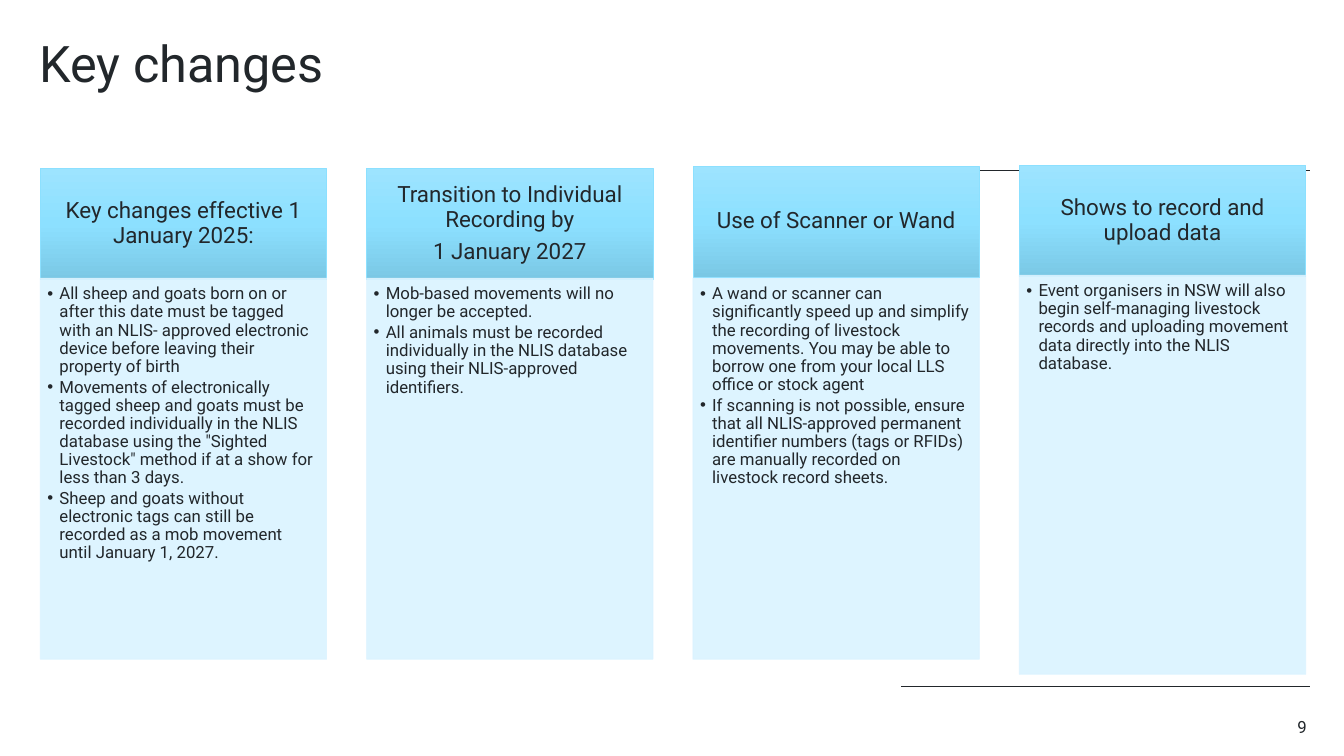
from copy import deepcopy

from lxml import etree
from pptx import Presentation
from pptx import util as u
from pptx.dml.color import RGBColor
from pptx.enum import shapes, text
from pptx.oxml import ns

PX = 9144
FONT = "Roboto"
INK = RGBColor(0x22, 0x27, 0x2B)
SKY = RGBColor(0x8C, 0xE0, 0xFF)
SKY_LIGHT = RGBColor(0x9D, 0xE4, 0xFF)
SKY_DARK = RGBColor(0x7A, 0xC8, 0xE5)
PALE = RGBColor(0xDA, 0xF3, 0xFF)

COLUMN_LEFT, COLUMN_STEP, COLUMN_WIDTH, HEAD_HEIGHT = 40, 323.67, 284, 110
COLUMNS = [
    (167, 276, 378, ["Key changes effective 1 January 2025:"], [
        "All sheep and goats born on or after this date must be tagged with an NLIS- approved "
        "electronic device before leaving their property of birth",
        "Movements of electronically tagged sheep and goats must be recorded individually in the "
        "NLIS database using the \"Sighted Livestock\" method if at a show for less than 3 days.",
        "Sheep and goats without electronic tags can still be recorded as a mob movement until "
        "January 1, 2027.",
    ]),
    (167, 276, 378, ["Transition to Individual Recording by", "1 January 2027"], [
        "Mob-based movements will no longer be accepted.",
        "All animals must be recorded individually in the NLIS database using their NLIS-approved "
        "identifiers.",
    ]),
    (165, 276, 378, ["Use of Scanner or Wand"], [
        "A wand or scanner can significantly speed up and simplify the recording of livestock "
        "movements. You may be able to borrow one from your local LLS office or stock agent",
        "If scanning is not possible, ensure that all NLIS-approved permanent identifier numbers "
        "(tags or RFIDs) are manually recorded on livestock record sheets.",
    ]),
    (164, 273, 396, ["Shows to record and upload data"], [
        "Event organisers in NSW will also begin self-managing livestock records and uploading "
        "movement data directly into the NLIS database.",
    ]),
]


def px(*lengths):
    return [u.Emu(round(length * PX)) for length in lengths]


def write(shape, lines, size, align, after=0, insets=(0, 0, 0, 0),
          anchor=text.MSO_ANCHOR.TOP, bullets=False):
    frame = shape.text_frame
    frame.word_wrap = True
    frame.vertical_anchor = anchor
    frame.margin_left, frame.margin_top, frame.margin_right, frame.margin_bottom = px(*insets)
    for index, line in enumerate(lines):
        para = frame.add_paragraph() if index else frame.paragraphs[0]
        para.text = line
        para.alignment = align
        para.line_spacing = 0.9
        para.space_after = u.Pt(after)
        if bullets:
            indent, = px(12)
            properties = para._p.get_or_add_pPr()
            properties.set("marL", str(indent))
            properties.set("indent", str(-indent))
            etree.SubElement(properties, ns.qn("a:buFont")).set("typeface", "Arial")
            etree.SubElement(properties, ns.qn("a:buChar")).set("char", "•")
        para.font.name = FONT
        para.font.size = u.Pt(size)
        para.font.color.rgb = INK


def add_label(page, box, label, size, align, after=0):
    write(page.shapes.add_textbox(*px(*box)), [label], size, align, after)


def add_rule(page, left, top, width):
    rule = page.shapes.add_connector(shapes.MSO_CONNECTOR.STRAIGHT,
                                     *px(left, top, left + width, top))
    rule.line.color.rgb = INK
    rule.line.width = u.Pt(0.5)
    etree.SubElement(rule._element.spPr, ns.qn("a:effectLst"))


def add_panel(page, box, line_color):
    panel = page.shapes.add_shape(shapes.MSO_SHAPE.RECTANGLE, *px(*box))
    panel.shadow.inherit = False
    panel.line.color.rgb = line_color
    panel.line.width = u.Pt(0.5)
    return panel


def add_head(page, box, lines):
    head = add_panel(page, box, SKY)
    head.fill.gradient()
    head.fill.gradient_angle = 270
    stop_list = head._element.spPr.find(".//" + ns.qn("a:gsLst"))
    stop_list.append(deepcopy(stop_list[-1]))
    for stop, position, color in zip(head.fill.gradient_stops, (0, 0.5, 1),
                                     (SKY_LIGHT, SKY, SKY_DARK)):
        stop.position = position
        stop.color.rgb = color
    write(head, lines, 16, text.PP_ALIGN.CENTER, 5.6, (12, 7, 12, 7), text.MSO_ANCHOR.MIDDLE)


def add_body(page, box, lines):
    body = add_panel(page, box, PALE)
    body.fill.solid()
    body.fill.fore_color.rgb = PALE
    for color in body._element.spPr.iter(ns.qn("a:srgbClr")):
        etree.SubElement(color, ns.qn("a:alpha")).set("val", "90000")
    write(body, lines, 12, text.PP_ALIGN.LEFT, 1.8, (7, 7, 9, 10), bullets=True)


def add_columns(page, left, step, width):
    for index, (head_top, body_top, body_height, heading, points) in enumerate(COLUMNS):
        column_left = left + index * step
        add_head(page, (column_left, head_top, width, HEAD_HEIGHT), heading)
        add_body(page, (column_left, body_top, width, body_height), points)


def main():
    deck = Presentation()
    deck.slide_width, deck.slide_height = px(1333, 750)
    page = deck.slides.add_slide(deck.slide_layouts[6])
    for top in (169, 681):
        add_rule(page, 894, top, 405)
    add_label(page, (39, 39, 1102, 110), "Key changes", 36, text.PP_ALIGN.LEFT)
    add_label(page, (1217, 713, 79, 20), "9", 12, text.PP_ALIGN.RIGHT, 6)
    add_columns(page, COLUMN_LEFT, COLUMN_STEP, COLUMN_WIDTH)
    deck.save("out.pptx")


if __name__ == "__main__":
    main()
